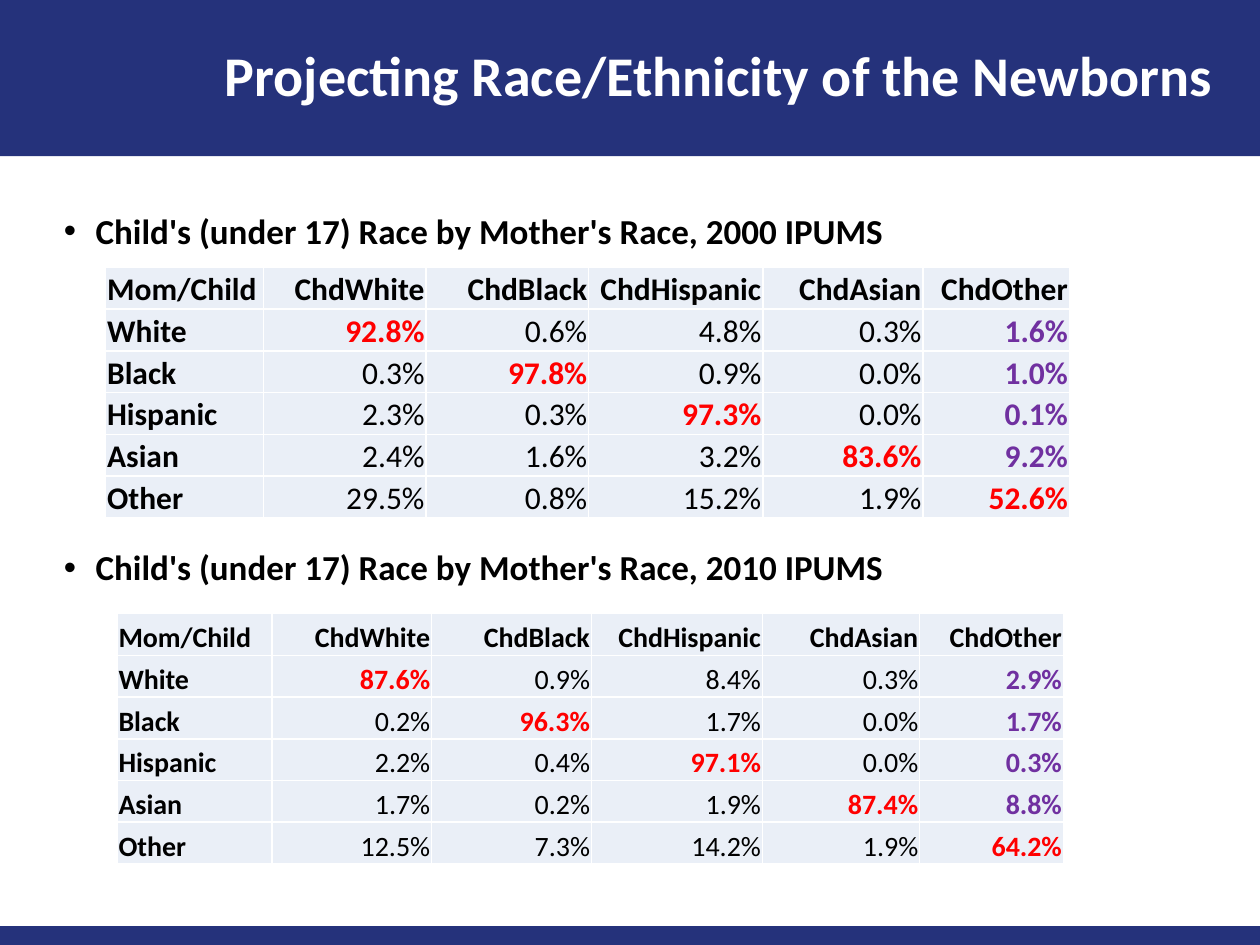
from lxml import etree
from pptx import Presentation, util as u
from pptx.dml.color import RGBColor
from pptx.enum import shapes, text
from pptx.oxml import ns

FONT = "Calibri"
HUES = {"navy": "25327B", "white": "FFFFFF", "black": "000000",
        "cell": "EAEFF7", "red": "FF0000", "plum": "7030A0"}
TITLE = "Projecting Race/Ethnicity of the Newborns"
HEADS = ["Child's (under 17) Race by Mother's Race, 2000 IPUMS",
         "Child's (under 17) Race by Mother's Race, 2010 IPUMS"]
BANDS = [(0, 3.15), (18.67, 0.38)]
RACES = ["White", "Black", "Hispanic", "Asian", "Other"]
SHARES = [1.25, 1.29, 1.29, 1.38, 1.27, 1.16]
TABLES = [
    {"at": (2.36, 12.37, 19.08, 5.05), "size": 16, "rates": [
        [87.6, 0.9, 8.4, 0.3, 2.9],
        [0.2, 96.3, 1.7, 0.0, 1.7],
        [2.2, 0.4, 97.1, 0.0, 0.3],
        [1.7, 0.2, 1.9, 87.4, 8.8],
        [12.5, 7.3, 14.2, 1.9, 64.2]]},
    {"at": (2.13, 5.39, 19.43, 5.05), "size": 18, "rates": [
        [92.8, 0.6, 4.8, 0.3, 1.6],
        [0.3, 97.8, 0.9, 0.0, 1.0],
        [2.3, 0.3, 97.3, 0.0, 0.1],
        [2.4, 1.6, 3.2, 83.6, 9.2],
        [29.5, 0.8, 15.2, 1.9, 52.6]]},
]


def rgb(hue):
    return RGBColor.from_string(HUES[hue])


def add_run(para, words, size, hue="black", bold=True):
    run = para.add_run()
    run.text = words
    font = run.font
    font.name, font.size, font.bold = FONT, u.Pt(size), bold
    font.color.rgb = rgb(hue)


def add_box(slide, *at):
    frame = slide.shapes.add_textbox(*map(u.Cm, at)).text_frame
    frame.word_wrap = True
    return frame


def add_band(slide, top, high):
    band = slide.shapes.add_shape(shapes.MSO_SHAPE.RECTANGLE,
                                  0, u.Cm(top), u.Cm(25.4), u.Cm(high))
    band.shadow.inherit = False
    band.fill.solid()
    band.fill.fore_color.rgb = rgb("navy")
    band.line.fill.background()


def add_title(slide):
    frame = add_box(slide, 3.89, 0.18, 21.21, 2.82)
    frame.vertical_anchor = text.MSO_ANCHOR.MIDDLE
    para = frame.paragraphs[0]
    para.alignment = text.PP_ALIGN.CENTER
    para.line_spacing = 0.9
    add_run(para, TITLE, 32, "white")


def add_heads(slide):
    frame = add_box(slide, 1.04, 4.19, 23.5, 12.95)
    for i, head in enumerate(HEADS):
        para = frame.add_paragraph() if i else frame.paragraphs[0]
        props = para._p.get_or_add_pPr()
        props.set("marL", str(u.Cm(0.64)))
        props.set("indent", str(-u.Cm(0.64)))
        etree.SubElement(props, ns.qn("a:buFont"), typeface="Arial")
        etree.SubElement(props, ns.qn("a:buChar"), char="•")
        para.line_spacing = 0.9
        if i:
            para.space_before = u.Pt(170.6)
        add_run(para, head, 20)


def add_rules(cell):
    props = cell._tc.get_or_add_tcPr()
    for i, side in enumerate(("lnL", "lnR", "lnT", "lnB")):
        line = etree.Element(ns.qn("a:" + side), w=str(u.Pt(1)))
        fill = etree.SubElement(line, ns.qn("a:solidFill"))
        etree.SubElement(fill, ns.qn("a:srgbClr"), val=HUES["white"])
        props.insert(i, line)


def style(row, col):
    if row == 0 or col == 0:
        return "black", True
    if row == col:
        return "red", True
    if col == len(RACES):
        return "plum", True
    return "black", False


def fill_cell(cell, words, size, row, col):
    cell.margin_left = cell.margin_right = cell.margin_top = u.Cm(0.03)
    cell.margin_bottom = 0
    cell.vertical_anchor = text.MSO_ANCHOR.BOTTOM
    cell.fill.solid()
    cell.fill.fore_color.rgb = rgb("cell")
    add_rules(cell)
    para = cell.text_frame.paragraphs[0]
    para.alignment = text.PP_ALIGN.RIGHT if col else text.PP_ALIGN.LEFT
    add_run(para, words, size, *style(row, col))


def add_grid(slide, at, size, rates):
    rows = [["Mom/Child"] + ["Chd" + race for race in RACES]]
    rows += [[race] + [f"{rate:.1f}%" for rate in line]
             for race, line in zip(RACES, rates)]
    grid = slide.shapes.add_table(len(rows), len(SHARES), *map(u.Cm, at)).table
    grid.first_row = grid.horz_banding = False
    for col, share in zip(grid.columns, SHARES):
        col.width = u.Cm(at[2] * share / sum(SHARES))
    for r, line in enumerate(rows):
        grid.rows[r].height = u.Cm(at[3] / len(rows))
        for c, words in enumerate(line):
            fill_cell(grid.cell(r, c), words, size, r, c)


def main():
    deck = Presentation()
    deck.slide_width, deck.slide_height = u.Cm(25.4), u.Cm(19.05)
    slide = deck.slides.add_slide(deck.slide_layouts[6])
    for band in BANDS:
        add_band(slide, *band)
    add_title(slide)
    add_heads(slide)
    for item in TABLES:
        add_grid(slide, **item)
    deck.save("out.pptx")


if __name__ == "__main__":
    main()
